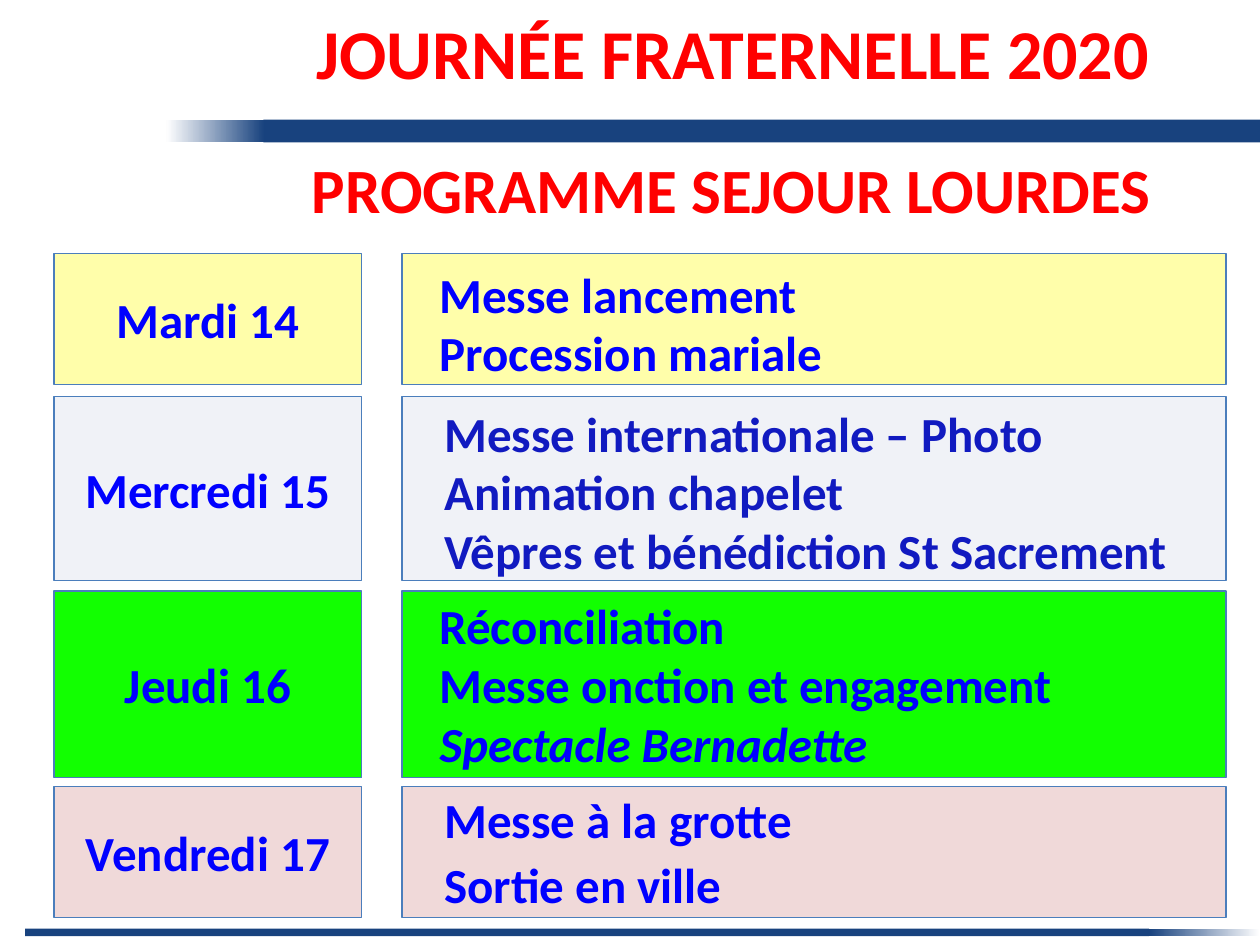
from pptx import Presentation
from pptx import util as u
from pptx.dml.color import RGBColor
from pptx.enum import shapes, text

NAVY = RGBColor(0x18, 0x42, 0x7E)
WHITE = RGBColor(0xFF, 0xFF, 0xFF)
RED = RGBColor(0xFF, 0x00, 0x00)
BLUE = RGBColor(0x00, 0x00, 0xFF)
INDIGO = RGBColor(0x11, 0x1A, 0xC0)
BORDER = RGBColor(0x4B, 0x7E, 0xBC)
YELLOW = RGBColor(0xFF, 0xFE, 0xAA)
PALE = RGBColor(0xF0, 0xF2, 0xF7)
GREEN = RGBColor(0x12, 0xFF, 0x01)
PINK = RGBColor(0xF0, 0xD9, 0xD9)

deck = Presentation()
deck.slide_width = u.Inches(10)
deck.slide_height = u.Inches(7.5)
page = deck.slides.add_slide(deck.slide_layouts[6])


def add_bar(left, top, width, height, color=None, border=None):
    bar = page.shapes.add_shape(
        shapes.MSO_SHAPE.RECTANGLE, u.Inches(left), u.Inches(top), u.Inches(width), u.Inches(height)
    )
    bar.shadow.inherit = False
    if color is None:
        bar.fill.gradient()
        bar.fill.gradient_angle = 180
        for stop, shade, position in zip(bar.fill.gradient_stops, (NAVY, WHITE), (0, 1)):
            stop.color.rgb = shade
            stop.position = position
    else:
        bar.fill.solid()
        bar.fill.fore_color.rgb = color
    if border is None:
        bar.line.fill.background()
    else:
        bar.line.color.rgb = border
        bar.line.width = u.Pt(0.75)
    return bar


def write(box, lines, size=28, color=BLUE, align=text.PP_ALIGN.LEFT,
          anchor=text.MSO_ANCHOR.TOP, spacing=(), italic=()):
    frame = box.text_frame
    frame.word_wrap = True
    frame.vertical_anchor = anchor
    for index, line in enumerate(lines):
        para = frame.paragraphs[0] if index == 0 else frame.add_paragraph()
        para.alignment = align
        if index < len(spacing):
            para.line_spacing = spacing[index]
        span = para.add_run()
        span.text = line
        span.font.name = "Calibri"
        span.font.size = u.Pt(size)
        span.font.bold = True
        span.font.italic = True if line in italic else None
        span.font.color.rgb = color


for left, width, color in ((0.2, 8.92, NAVY), (9.12, 0.88, None)):
    add_bar(left, 7.37, width, 0.06, color).rotation = 180
for left, width, color in ((2.09, 7.91, NAVY), (1.32, 0.78, None)):
    add_bar(left, 0.95, width, 0.18, color)

headings = (
    ("JOURNÉE FRATERNELLE 2020", 1.78, 0.02, 8.07, 0.77, 40),
    ("PROGRAMME SEJOUR LOURDES", 1.61, 1.14, 8.39, 0.71, 36),
)
for heading, left, top, width, height, size in headings:
    box = page.shapes.add_textbox(u.Inches(left), u.Inches(top), u.Inches(width), u.Inches(height))
    write(box, [heading], size=size, color=RED, align=text.PP_ALIGN.CENTER,
          anchor=text.MSO_ANCHOR.MIDDLE)

days = (
    ("Mardi 14", 2.01, 1.04, YELLOW, (3.39, 1.86, 6.5, 1.23),
     ("Messe lancement", "Procession mariale"), {"spacing": (1.4,)}),
    ("Mercredi 15", 3.15, 1.46, PALE, (3.43, 3.15, 6.3, 1.51),
     ("Messe internationale – Photo", "Animation chapelet", "Vêpres et bénédiction St Sacrement"),
     {"color": INDIGO}),
    ("Jeudi 16", 4.69, 1.48, GREEN, (3.39, 4.68, 6.3, 1.51),
     ("Réconciliation", "Messe onction et engagement", "Spectacle Bernadette"),
     {"italic": ("Spectacle Bernadette",)}),
    ("Vendredi 17", 6.24, 1.04, PINK, (3.43, 6.17, 6.3, 1.11),
     ("Messe à la grotte", "Sortie en ville"), {"spacing": (1.1, 1.1)}),
)
for day, top, height, color, place, events, style in days:
    label = add_bar(0.43, top, 2.44, height, color, BORDER)
    write(label, [day], align=text.PP_ALIGN.CENTER, anchor=text.MSO_ANCHOR.MIDDLE)
    add_bar(3.19, top, 6.54, height, color, BORDER)
    box = page.shapes.add_textbox(*[u.Inches(length) for length in place])
    write(box, events, **style)

deck.save("out.pptx")
